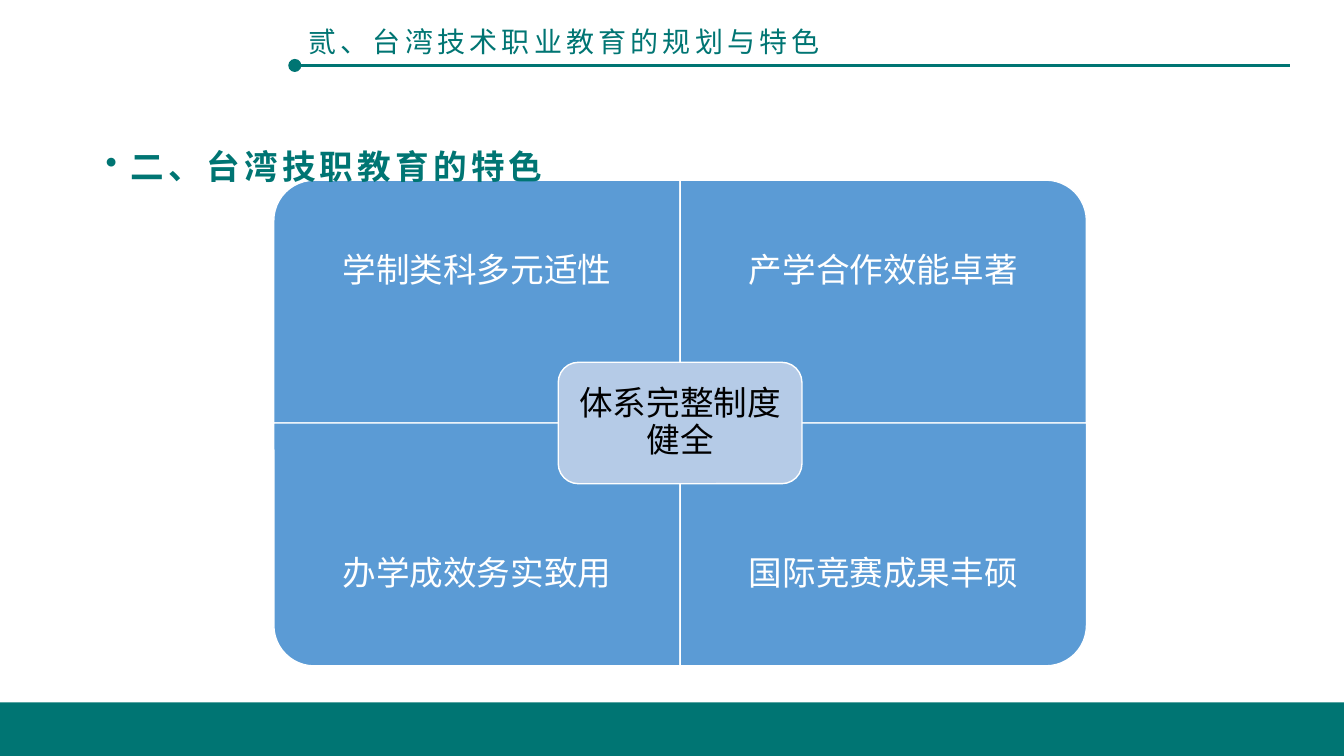
from dataclasses import dataclass

from lxml import etree
from pptx import Presentation
from pptx.dml.color import RGBColor as Rgb
from pptx.enum import shapes, text
from pptx.oxml import ns
from pptx.util import Cm, Pt


@dataclass(frozen=True)
class Theme:
    teal: str = "007573"
    blue: str = "5B9BD5"
    pale: str = "B5CBE7"
    white: str = "FFFFFF"
    black: str = "000000"
    font: str = "Noto Sans CJK SC"
    head: int = 20
    body: int = 24
    rule: float = 1.5
    edge: float = 1


T = Theme()
KIND = shapes.MSO_SHAPE
MID = text.MSO_ANCHOR.MIDDLE
LEFT, MIDDLE = text.PP_ALIGN.LEFT, text.PP_ALIGN.CENTER


def write(frame, words, size, color, pad=(0.25, 0.13), anchor=MID,
          align=MIDDLE, line=0.9, bold=False, gap=0, mark=None):
    """Fill a text frame with one paragraph; gap is letter spacing in points."""
    form = dict(word_wrap=True, auto_size=text.MSO_AUTO_SIZE.NONE,
                vertical_anchor=anchor,
                margin_left=Cm(pad[0]), margin_right=Cm(pad[0]),
                margin_top=Cm(pad[1]), margin_bottom=Cm(pad[1]))
    for key, value in form.items():
        setattr(frame, key, value)
    para = frame.paragraphs[0]
    if mark:
        props = para._p.get_or_add_pPr()
        props.set("marL", str(Cm(0.64)))
        props.set("indent", str(-Cm(0.64)))
        etree.SubElement(props, ns.qn("a:buChar")).set("char", mark)
    para.alignment, para.line_spacing = align, line
    run = para.add_run()
    run.text = words
    for key, value in dict(name=T.font, size=Pt(size), bold=bold).items():
        setattr(run.font, key, value)
    run.font.color.rgb = Rgb.from_string(color)
    props = run._r.get_or_add_rPr()
    props.set("spc", str(gap * 100))
    etree.SubElement(props, ns.qn("a:ea")).set("typeface", T.font)


def block(slide, kind, box, fill, edge=None):
    shape = slide.shapes.add_shape(kind, *map(Cm, box))
    shape.shadow.inherit = False
    shape.fill.solid()
    shape.fill.fore_color.rgb = Rgb.from_string(fill)
    if edge:
        shape.line.color.rgb = Rgb.from_string(edge)
        shape.line.width = Pt(T.edge)
    else:
        shape.line.fill.background()
    return shape


def header(slide, box, words):
    """Place the title above a rule that starts with a dot."""
    x, y, w, h = box
    title = slide.shapes.title
    form = dict(left=x + 0.1, top=y, width=13.82, height=h)
    for key, value in form.items():
        setattr(title, key, Cm(value))
    write(title.text_frame, words, T.head, T.teal, align=LEFT, gap=3)
    base = y + h
    rule = slide.shapes.add_connector(
        shapes.MSO_CONNECTOR.STRAIGHT, Cm(x), Cm(base), Cm(x + w), Cm(base))
    rule.line.color.rgb = Rgb.from_string(T.teal)
    rule.line.width = Pt(T.rule)
    etree.SubElement(rule._element.spPr, ns.qn("a:effectLst"))
    dot = 0.33
    block(slide, KIND.OVAL, (x - dot / 2 + 0.01, base - dot / 2, dot, dot), T.teal)


def matrix(slide, box, labels, core):
    """Place four quadrants, rounded at the outer corners, around a core."""
    x, y, w, h = box
    wide, high = w / 2, h / 2
    turns = (270, 0, 180, 90)
    for i, (label, turn) in enumerate(zip(labels, turns)):
        row, col = divmod(i, 2)
        left, top = x + col * wide, y + row * high
        pw, ph = (high, wide) if turn % 180 else (wide, high)
        place = (left + (wide - pw) / 2, top + (high - ph) / 2, pw, ph)
        part = block(slide, KIND.ROUND_1_RECTANGLE, place, T.blue, T.white)
        part.rotation = turn
        area = (left, top + row * high / 4, wide, high * 3 / 4)
        note = slide.shapes.add_textbox(*map(Cm, area))
        write(note.text_frame, label, T.body, T.white, pad=(0.48, 0.48))
    cw, ch = wide * 0.6, high / 2
    place = (x + (w - cw) / 2, y + (h - ch) / 2, cw, ch)
    heart = block(slide, KIND.ROUNDED_RECTANGLE, place, T.pale, T.white)
    write(heart.text_frame, core, T.body, T.black, pad=(0.25, 0.25))


def topic(slide, box, words):
    note = slide.shapes.add_textbox(*map(Cm, box))
    write(note.text_frame, words, T.body, T.teal, anchor=text.MSO_ANCHOR.TOP,
          align=LEFT, line=1.5, bold=True, gap=3, mark="•")


def main():
    deck = Presentation()
    wide, high = 33.87, 19.05
    deck.slide_width, deck.slide_height = Cm(wide), Cm(high)
    slide = deck.slides.add_slide(deck.slide_layouts[5])
    header(slide, (7.42, 0.52, 25.09, 1.13), "贰、台湾技术职业教育的规划与特色")
    foot = 1.35
    block(slide, KIND.RECTANGLE, (0, high - foot, wide, foot), T.teal)
    matrix(slide, (6.9, 4.54, 20.48, 12.24),
           ("学制类科多元适性", "产学合作效能卓著",
            "办学成效务实致用", "国际竞赛成果丰硕"), "体系完整制度健全")
    topic(slide, (2.41, 3.05, 29.44, 13.74), "二、台湾技职教育的特色")
    deck.save("out.pptx")


if __name__ == "__main__":
    main()
